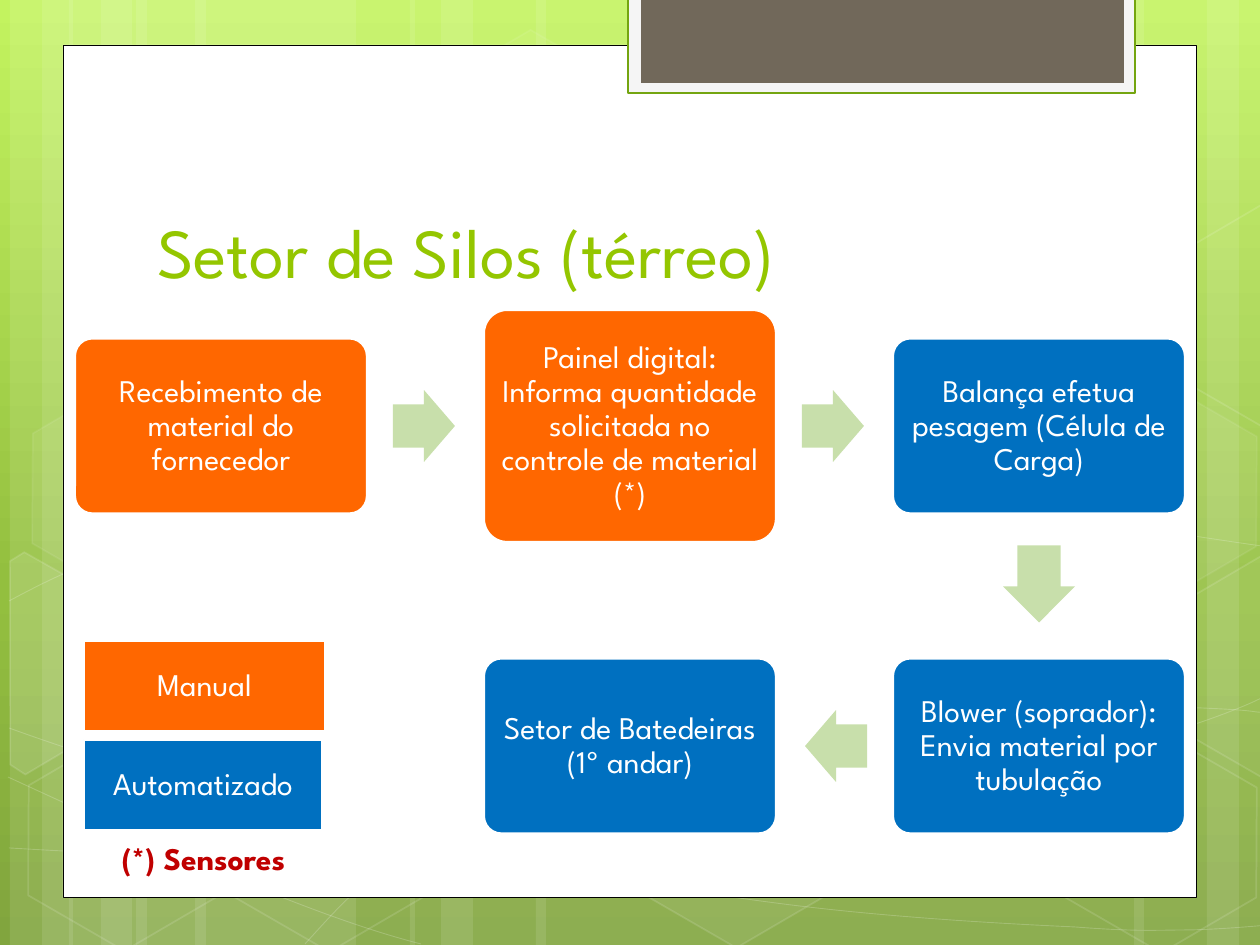
from dataclasses import dataclass
from math import cos, radians, sin
from typing import Optional

from lxml import etree
from pptx import Presentation
from pptx.dml.color import RGBColor
from pptx.enum.shapes import MSO_SHAPE
from pptx.enum.text import MSO_ANCHOR, PP_ALIGN
from pptx.oxml import parse_xml
from pptx.oxml.ns import nsdecls, qn
from pptx.util import Emu, Pt

SCALE = 914400 / 126  # EMU per px
FONT = "League Spartan"
WHITE, ORANGE, BLUE, PALE = "FFFFFF", "FF6700", "0070C0", "C8DFAB"
RED, LIME = "C00000", "94C600"
RECT, ROUND, HEXAGON, ARROW = (MSO_SHAPE.RECTANGLE, MSO_SHAPE.ROUNDED_RECTANGLE,
                               MSO_SHAPE.HEXAGON, MSO_SHAPE.RIGHT_ARROW)
CENTER, LEFT = PP_ALIGN.CENTER, PP_ALIGN.LEFT
MIDDLE, BOTTOM = MSO_ANCHOR.MIDDLE, MSO_ANCHOR.BOTTOM


@dataclass
class Paint:
    fill: Optional[str] = None
    fill_alpha: int = 100
    line: Optional[str] = None
    line_alpha: int = 100
    weight: float = 1


@dataclass
class Step:
    text: str
    column: int
    row: int
    color: str
    height: int = 175


@dataclass
class Arrow:
    center_x: int
    center_y: int
    length: int = 62
    turn: int = 0


@dataclass
class CutHexagon:
    points: list
    center: tuple
    alpha: int


def px(length: float) -> Emu:
    return Emu(round(length * SCALE))


def set_color(fill, color: str, alpha: int = 100) -> None:
    fill.solid()
    fill.fore_color.rgb = RGBColor.from_string(color)
    if alpha < 100:
        node = next(fill._xPr.iter(qn("a:srgbClr")))
        etree.SubElement(node, qn("a:alpha")).set("val", str(alpha * 1000))


def apply_paint(shape, paint: Paint) -> None:
    shape.shadow.inherit = False
    if paint.fill:
        set_color(shape.fill, paint.fill, paint.fill_alpha)
    else:
        shape.fill.background()
    if paint.line:
        set_color(shape.line.fill, paint.line, paint.line_alpha)
        shape.line.width = Pt(paint.weight)
    else:
        shape.line.fill.background()


def add_box(page, kind, box: tuple, paint: Paint, turn: int = 0):
    shape = page.shapes.add_shape(kind, *map(px, box))
    shape.rotation = turn
    apply_paint(shape, paint)
    return shape


def add_outline(page, points: list, paint: Paint, close: bool):
    builder = page.shapes.build_freeform(*points[0], scale=SCALE)
    builder.add_line_segments(points[1:], close=close)
    shape = builder.convert_to_shape()
    apply_paint(shape, paint)
    return shape


def add_curve(page, knots: list, paint: Paint) -> None:
    """Draw a chain of cubic curves: a start, then three knots per piece."""
    shape = add_outline(page, knots, paint, False)
    lines = list(shape._element.iter(qn("a:lnTo")))
    for first in range(0, len(lines), 3):
        curve = etree.Element(qn("a:cubicBezTo"))
        lines[first].addprevious(curve)
        for line in lines[first:first + 3]:
            curve.append(line[0])
            line.getparent().remove(line)


def add_cut_hexagon(page, cut: CutHexagon, turn: int = 30) -> None:
    """Lay the outline level, then let the shape's rotation turn it back."""
    (mid_x, mid_y), angle = cut.center, radians(-turn)
    level = [(mid_x + (x - mid_x) * cos(angle) - (y - mid_y) * sin(angle),
              mid_y + (x - mid_x) * sin(angle) + (y - mid_y) * cos(angle))
             for x, y in cut.points]
    paint = Paint(WHITE if cut.alpha else None, cut.alpha, WHITE, 12)
    add_outline(page, level, paint, True).rotation = turn


def write_text(shape, text: str, color: str = WHITE, size: int = 18, bold: bool = False,
               align=CENTER, anchor=MIDDLE, insets: tuple = (9, 9), spacing: float = 0.9) -> None:
    side, edge = map(px, insets)
    frame = shape.text_frame
    frame_format = {"word_wrap": True, "vertical_anchor": anchor, "margin_left": side,
                    "margin_right": side, "margin_top": edge, "margin_bottom": edge}
    for name, value in frame_format.items():
        setattr(frame, name, value)
    para = frame.paragraphs[0]
    para.alignment, para.line_spacing = align, spacing
    span = para.add_run()
    span.text = text
    for name, value in {"name": FONT, "size": Pt(size), "bold": bold}.items():
        setattr(span.font, name, value)
    set_color(span.font.fill, color)


STRIPES = [(136, 220), (10, 63), (42, 105), (195, 220), (69, 63), (101, 105), (924, 220),
           (1207, 53), (1134, 105), (536, 388), (410, 63), (441, 105)]
CURVES = [
    [(9, 848), (77, 852), (145, 856), (239, 854), (334, 853), (451, 850), (577, 838),
     (703, 825), (882, 801), (998, 777), (1113, 753), (1231, 716), (1269, 694)],
    [(9, 601), (45, 582), (82, 562), (152, 543), (224, 524), (326, 496), (437, 488),
     (549, 479), (685, 478), (824, 488), (963, 498), (1193, 537), (1269, 547)],
    [(8, 777), (160, 847), (311, 916), (421, 944)],
    [(9, 728), (48, 742), (88, 756), (161, 776), (234, 795), (344, 827), (450, 848),
     (554, 869), (687, 892), (791, 905), (896, 918), (1008, 924), (1075, 927),
     (1140, 932), (1158, 930), (1191, 930), (1223, 929), (1246, 927), (1269, 925)],
    [(305, 944), (328, 919), (350, 893), (381, 871), (411, 848), (454, 823), (489, 805),
     (524, 788), (546, 780), (592, 767), (638, 755), (722, 737), (766, 728),
     (811, 719), (818, 719), (857, 717), (896, 713), (958, 709), (1000, 708),
     (1045, 707), (1116, 708), (1116, 708), (1144, 708), (1173, 708), (1201, 708),
     (1223, 709), (1244, 710), (1256, 712), (1268, 713), (1263, 713), (1268, 713)],
]
# left, top, fill alpha, line alpha
HEXAGONS = [(421, 45, 4, 8), (626, 742, 6, 12), (14, 745, 0, 12), (18, 393, 7, 8),
            (219, 746, 0, 12), (1051, 747, 0, 12), (1051, 396, 7, 8)]
LEFT_CUT = [(10, 561), (24, 552), (121, 607), (120, 718), (25, 774), (10, 765)]
RIGHT_CUT = [(1167, 611), (1261, 556), (1271, 562), (1271, 772), (1263, 777), (1167, 722)]
UPPER_CUT = [(x, y - 351) for x, y in RIGHT_CUT]
CUT_HEXAGONS = [CutHexagon(LEFT_CUT, (45, 674), 10), CutHexagon(RIGHT_CUT, (1241, 655), 4),
                CutHexagon(UPPER_CUT, (1241, 304), 0)]

COLUMN_CENTERS = (221, 630, 1039)
ROW_CENTERS = (426, 746)
STEP_WIDTH, ARROW_HEIGHT = 292, 72
STEPS = [
    Step("Recebimento de material do fornecedor", 0, 0, ORANGE),
    Step("Painel digital: Informa quantidade solicitada no controle de material (*)",
         1, 0, ORANGE, 232),
    Step("Balança efetua pesagem (Célula de Carga)", 2, 0, BLUE),
    Step("Blower (soprador): Envia material por tubulação", 2, 1, BLUE),
    Step("Setor de Batedeiras (1º andar)", 1, 1, BLUE),
]
ARROWS = [Arrow(424, 426), Arrow(833, 426), Arrow(1039, 584, 77, 90), Arrow(836, 746, turn=180)]
LEGEND = [("Manual", (84, 641, 241, 90), ORANGE), ("Automatizado", (84, 740, 238, 90), BLUE)]


def add_background(page) -> None:
    stops = "".join(f'<a:gs pos="{place}000"><a:srgbClr val="{color}"/></a:gs>'
                    for place, color in ((0, "C3F35F"), (62, "93BF3F"), (100, "81A53E")))
    page.background.fill.solid()
    properties = next(page._element.iter(qn("p:bgPr")))
    properties.replace(properties[0], parse_xml(
        f'<a:gradFill {nsdecls("a")} rotWithShape="1"><a:gsLst>{stops}</a:gsLst>'
        '<a:lin ang="5400000" scaled="0"/></a:gradFill>'))
    for left, width in STRIPES:
        add_box(page, RECT, (left, 0, width, 945), Paint(WHITE, 10))
    for knots in CURVES:
        add_curve(page, knots, Paint(line=WHITE, line_alpha=20, weight=0.5))
    for left, top, fill_alpha, line_alpha in HEXAGONS:
        paint = Paint(WHITE if fill_alpha else None, fill_alpha, WHITE, line_alpha)
        add_box(page, HEXAGON, (left, top, 220, 191), paint, 30).adjustments[0] = 0.285
    for cut in CUT_HEXAGONS:
        add_cut_hexagon(page, cut)
    # White card and top tab
    add_box(page, RECT, (63, 45, 1134, 853), Paint(WHITE, line="000000", weight=0.5))
    add_box(page, RECT, (628, -3, 507, 96), Paint("F5F5F5", line="74A510", weight=1.25))
    add_box(page, RECT, (641, -3, 483, 86), Paint("71685A"))


def add_title(page) -> None:
    title = page.shapes.title
    bounds = dict(zip(("left", "top", "width", "height"), map(px, (144, 141, 968, 158))))
    for name, value in bounds.items():
        setattr(title, name, value)
    write_text(title, "Setor de Silos (térreo)", LIME, 40, align=LEFT, anchor=BOTTOM,
               insets=(13, 6), spacing=1.0)
    # Bring the title in front of the card
    page.shapes._spTree.append(title._element)


def add_flow(page) -> None:
    for step in STEPS:
        box = (COLUMN_CENTERS[step.column] - STEP_WIDTH / 2,
               ROW_CENTERS[step.row] - step.height / 2, STEP_WIDTH, step.height)
        shape = add_box(page, ROUND, box, Paint(step.color, line=WHITE, weight=1.25))
        shape.adjustments[0] = 0.1
        write_text(shape, step.text)
    for arrow in ARROWS:
        box = (arrow.center_x - arrow.length / 2, arrow.center_y - ARROW_HEIGHT / 2,
               arrow.length, ARROW_HEIGHT)
        add_box(page, ARROW, box, Paint(PALE), arrow.turn).adjustments[0] = 0.6


def add_legend(page) -> None:
    for text, box, color in LEGEND:
        write_text(add_box(page, RECT, box, Paint(color, line=WHITE, weight=1.25)), text)
    note = page.shapes.add_textbox(*map(px, (84, 831, 239, 58)))
    write_text(note, "(*) Sensores", RED, bold=True)


def main() -> None:
    deck = Presentation()
    deck.slide_width, deck.slide_height = px(1260), px(945)
    page = deck.slides.add_slide(deck.slide_layouts[5])
    add_background(page)
    add_title(page)
    add_flow(page)
    add_legend(page)
    deck.save("out.pptx")


if __name__ == "__main__":
    main()
